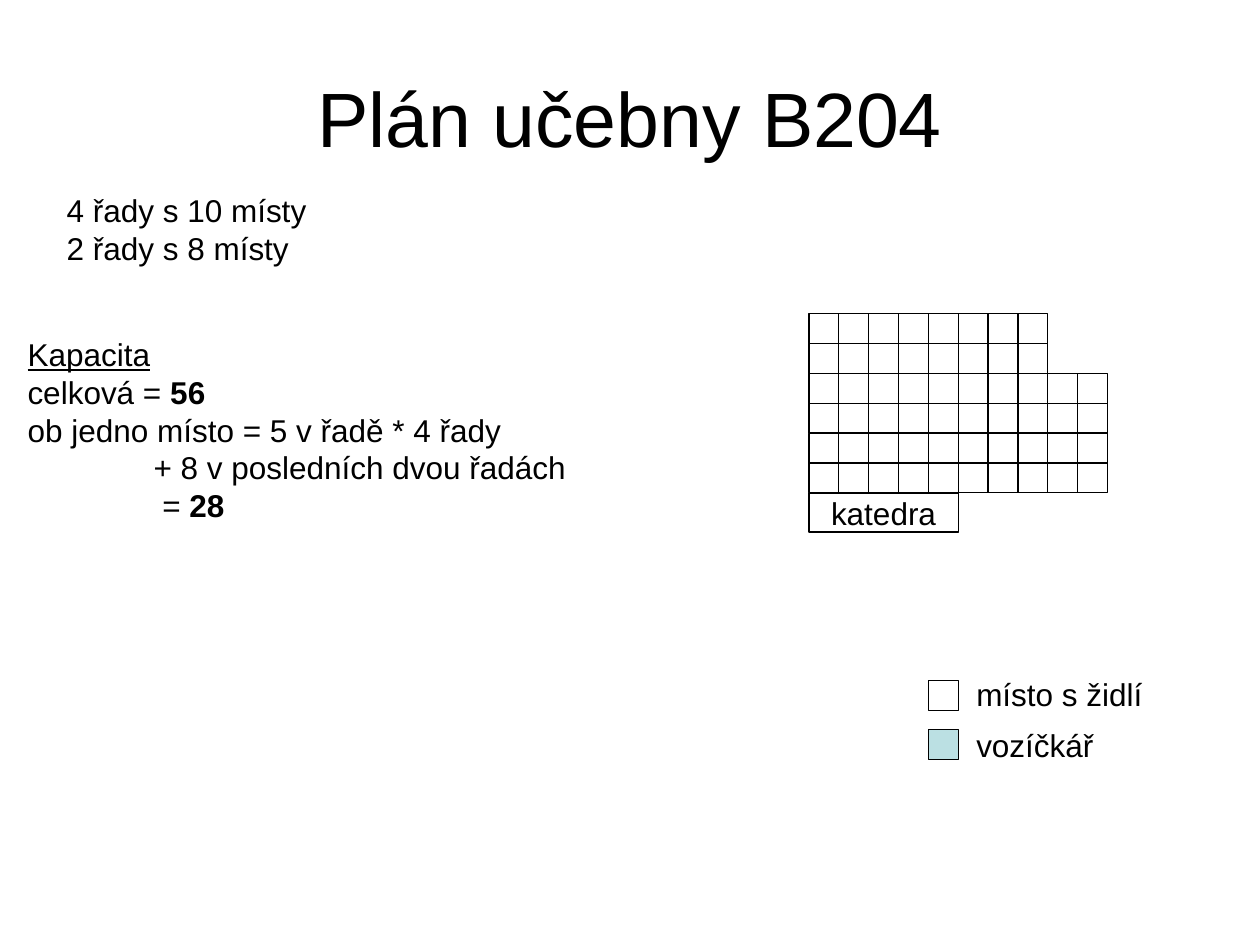
from pptx import Presentation
from pptx.dml.color import RGBColor
from pptx.enum.shapes import MSO_SHAPE as Kind
from pptx.enum.text import MSO_ANCHOR as Anchor, MSO_AUTO_SIZE as Auto, PP_ALIGN as Align
from pptx.util import Inches, Pt

UNIT = Inches(0.1)
BLACK = "000000"
SEAT = 2.37
LEFT, TOP = 64.2, 24.9
ROWS = [8, 8, 10, 10, 10, 10]


def grid(*nums):
    return [round(num * UNIT) for num in nums]


def color(code):
    return RGBColor.from_string(code)


def write(frame, lines, size=18, align=Align.LEFT, anchor=Anchor.TOP, wrap=False):
    frame.word_wrap = wrap
    frame.vertical_anchor = anchor
    para = frame.paragraphs[0]
    para.alignment = align
    for num, line in enumerate(lines):
        if num:
            para.add_line_break()
        for text, style in line:
            run = para.add_run()
            run.text = text
            font = run.font
            font.name, font.size = "Arial", Pt(size)
            font.color.rgb = color(BLACK)
            font.bold = style == "bold"
            font.underline = style == "under"


def label(shapes, lines, *place):
    frame = shapes.add_textbox(*grid(*place)).text_frame
    write(frame, lines)
    frame.auto_size = Auto.SHAPE_TO_FIT_TEXT


def box(shapes, *place, fill=None):
    shape = shapes.add_shape(Kind.RECTANGLE, *grid(*place))
    shape.shadow.inherit = False
    if fill:
        shape.fill.solid()
        shape.fill.fore_color.rgb = color(fill)
    else:
        shape.fill.background()
    shape.line.color.rgb = color(BLACK)
    shape.line.width = Pt(0.75)
    return shape


def plain(*texts):
    return [[(text, None)] for text in texts]


def legend(slide):
    shapes = slide.shapes.add_group_shape().shapes
    left = LEFT + 4 * SEAT
    items = [("místo s židlí", 15.2, None), ("vozíčkář", 11.3, "BBE0E3")]
    for row, (text, width, fill) in enumerate(items):
        box(shapes, left, 54 + 3.9 * row, SEAT, SEAT, fill=fill)
        label(shapes, plain(text), 76.5, 53.1 + 4 * row, width, 4)


def room(slide):
    shapes = slide.shapes.add_group_shape().shapes
    desk = box(shapes, LEFT, TOP + len(ROWS) * SEAT, 5 * SEAT, 3.1)
    write(desk.text_frame, plain("katedra"), align=Align.CENTER, anchor=Anchor.MIDDLE)
    for row, count in reversed(list(enumerate(ROWS))):
        for col in range(count):
            box(shapes, LEFT + col * SEAT, TOP + row * SEAT, SEAT, SEAT)


def main():
    deck = Presentation()
    deck.slide_width, deck.slide_height = grid(100, 75)
    slide = deck.slides.add_slide(deck.slide_layouts[5])
    title = slide.shapes.title
    title.left, title.top, title.width, title.height = grid(5, 3, 90, 12.5)
    write(title.text_frame, plain("Plán učebny B204"), size=44,
          align=Align.CENTER, anchor=Anchor.MIDDLE, wrap=True)
    label(slide.shapes, plain("4 řady s 10 místy", "2 řady s 8 místy"),
          4.3, 14.7, 21.2, 7.1)
    label(slide.shapes, [
        [("Kapacita", "under")],
        [("celková = ", None), ("56 ", "bold")],
        *plain("ob jedno místo = 5 v řadě * 4 řady ",
               "\t\t+ 8 v posledních dvou řadách"),
        [("\t\t = ", None), ("28", "bold")],
    ], 1.2, 26.1, 55.2, 16.2)
    legend(slide)
    room(slide)
    deck.save("out.pptx")


if __name__ == "__main__":
    main()
